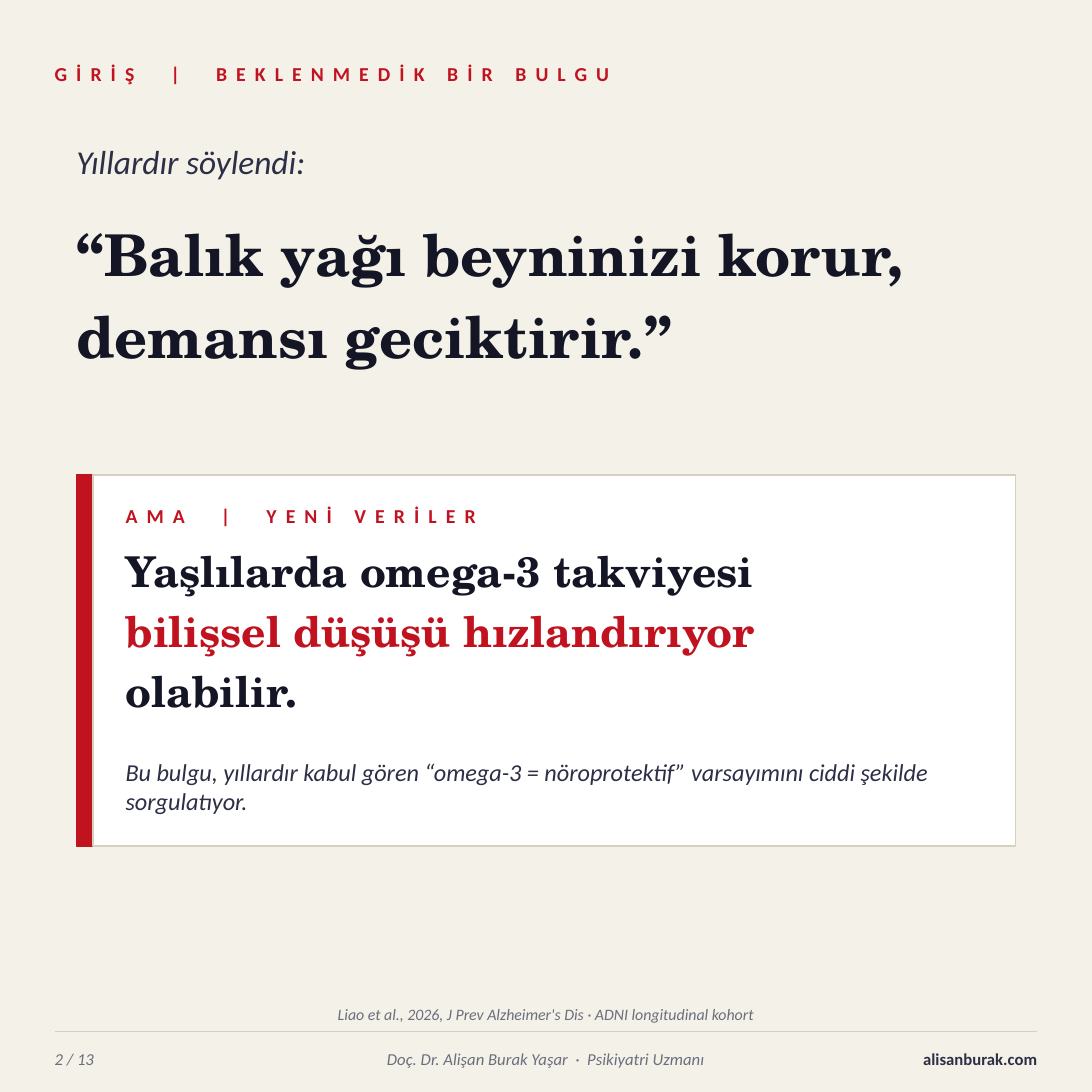
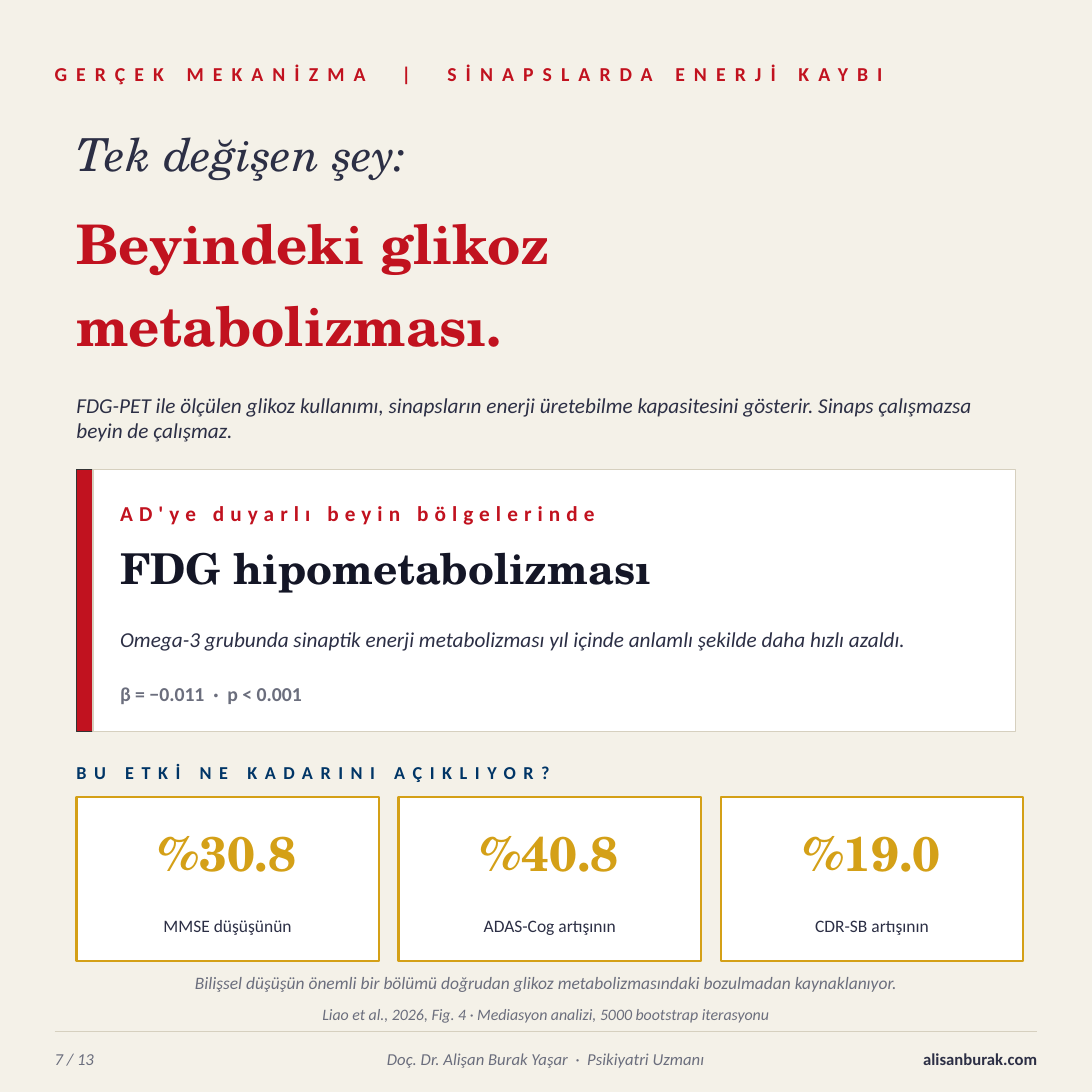
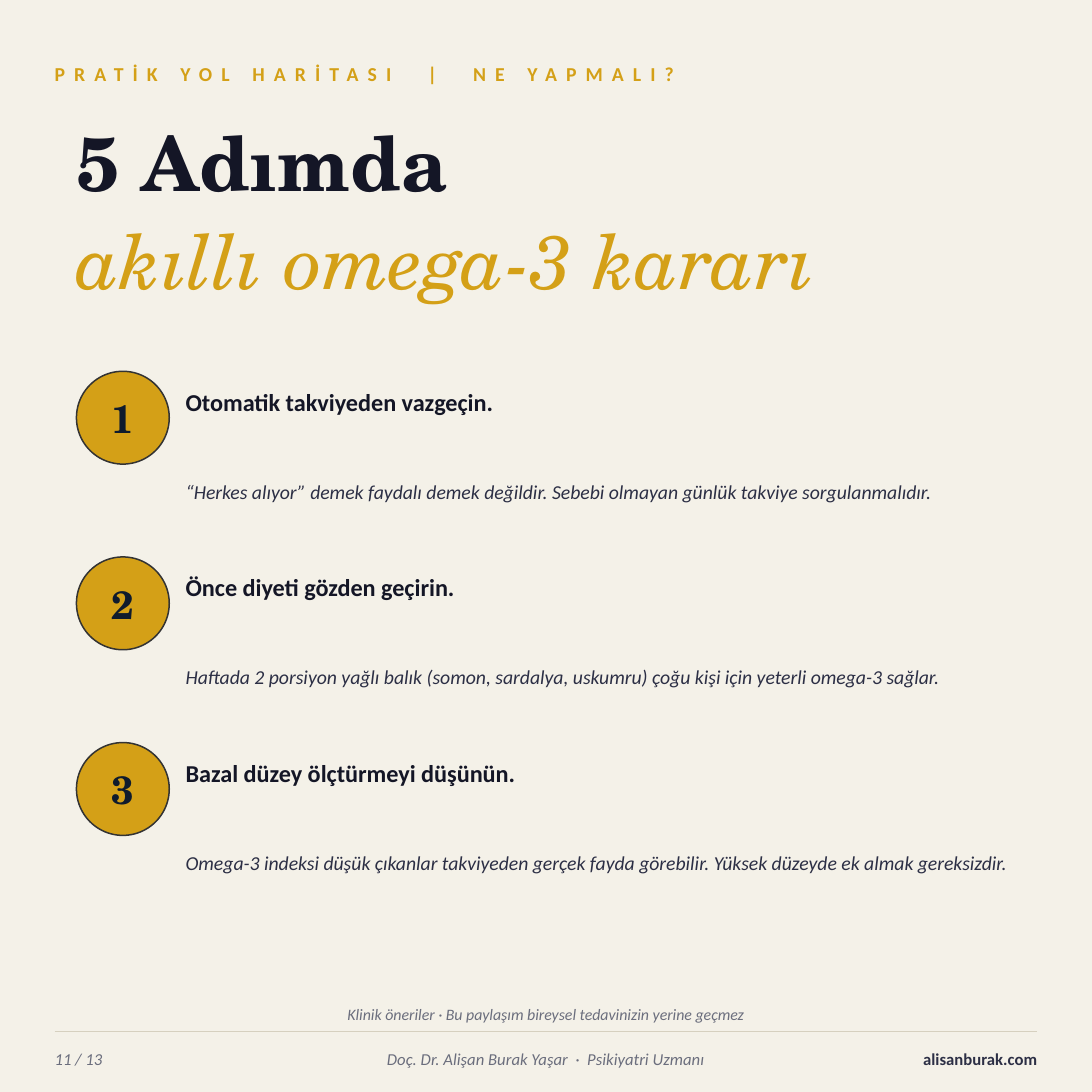
from dataclasses import dataclass, replace
from typing import NamedTuple

from lxml.etree import SubElement
from pptx import Presentation
from pptx.dml.color import RGBColor
from pptx.enum.shapes import MSO_CONNECTOR, MSO_SHAPE
from pptx.enum.text import MSO_ANCHOR, PP_ALIGN
from pptx.oxml.ns import qn
from pptx.presentation import Presentation as Deck
from pptx.shapes.autoshape import Shape
from pptx.slide import Slide
from pptx.util import Pt

PAPER, WHITE, BORDER, OUTLINE = "F4F1E8", "FFFFFF", "D6D0BF", "333333"
INK, SLATE, GREY, NAVY = "141626", "2C2F45", "6B6E7D", "0F1B2D"
RED, GOLD, BLUE = "C1121F", "D4A017", "003566"
SANS, SERIF = "Calibri", "TeX Gyre Schola"

SLIDE_SIZE = 720
SLIDE_TOTAL = 13
MARGIN = 36
BODY_LEFT = 50.4
BODY_WIDTH = 648
CARD_WIDTH = 619.2
BAR_WIDTH = 10.8


class Box(NamedTuple):
    left: float
    top: float
    width: float
    height: float


@dataclass(frozen=True)
class TextStyle:
    size: float
    color: str
    name: str = SANS
    bold: bool = False
    italic: bool = False
    spacing: float = 0
    align: PP_ALIGN = PP_ALIGN.LEFT


class TextRow(NamedTuple):
    text: str
    top: float
    height: float
    style: TextStyle


class Statistic(NamedTuple):
    value: str
    label: str


class Step(NamedTuple):
    title: str
    detail: str


KICKER = TextStyle(13, RED, bold=True, spacing=6)
HEADLINE = TextStyle(38, INK, SERIF, bold=True)
CARD_TITLE = replace(HEADLINE, size=28)
BODY = TextStyle(14, SLATE, italic=True)
SOURCE = TextStyle(10.5, GREY, italic=True, align=PP_ALIGN.CENTER)
FOOTER = TextStyle(11, GREY, italic=True)


def rgb(color: str) -> RGBColor:
    return RGBColor.from_string(color)


def write_text(shape: Shape, text: str, style: TextStyle) -> None:
    frame = shape.text_frame
    frame_format = {
        "word_wrap": True,
        "vertical_anchor": MSO_ANCHOR.MIDDLE,
        "margin_left": 0,
        "margin_top": 0,
        "margin_right": 0,
        "margin_bottom": 0,
    }
    for attribute, value in frame_format.items():
        setattr(frame, attribute, value)
    paragraph = frame.paragraphs[0]
    paragraph.alignment = style.align
    run = paragraph.add_run()
    run.text = text
    font_format = {
        "name": style.name,
        "size": Pt(style.size),
        "bold": style.bold,
        "italic": style.italic,
    }
    for attribute, value in font_format.items():
        setattr(run.font, attribute, value)
    run.font.color.rgb = rgb(style.color)
    if style.spacing:
        run._r.get_or_add_rPr().set("spc", str(round(style.spacing * 100)))


def add_text(slide: Slide, box: Box, text: str, style: TextStyle) -> None:
    write_text(slide.shapes.add_textbox(*map(Pt, box)), text, style)


def add_rows(slide: Slide, left: float, width: float, rows: list[TextRow]) -> None:
    """Add text rows that share a left edge and a width."""
    for row in rows:
        add_text(slide, Box(left, row.top, width, row.height), row.text, row.style)


def add_panel(slide: Slide, box: Box, fill: str, line: str, line_width: float = 1,
              kind: MSO_SHAPE = MSO_SHAPE.RECTANGLE) -> Shape:
    shape = slide.shapes.add_shape(kind, *map(Pt, box))
    shape.shadow.inherit = False
    shape.fill.solid()
    shape.fill.fore_color.rgb = rgb(fill)
    shape.line.color.rgb = rgb(line)
    shape.line.width = Pt(line_width)
    return shape


def add_card(slide: Slide, top: float, height: float, bar_line: str) -> None:
    """Add a white card with a red bar at its left edge."""
    add_panel(slide, Box(BODY_LEFT, top, BAR_WIDTH, height), RED, bar_line)
    card = Box(BODY_LEFT + BAR_WIDTH, top, CARD_WIDTH - BAR_WIDTH, height)
    add_panel(slide, card, WHITE, BORDER)


def add_footer(slide: Slide, number: int, source: str) -> None:
    rule = slide.shapes.add_connector(
        MSO_CONNECTOR.STRAIGHT, Pt(MARGIN), Pt(680.4), Pt(SLIDE_SIZE - MARGIN), Pt(680.4))
    rule.line.color.rgb = rgb(BORDER)
    rule.line.width = Pt(0.75)
    SubElement(rule._element.spPr, qn("a:effectLst"))
    add_text(slide, Box(MARGIN, 658.8, BODY_WIDTH, 20.16), source, SOURCE)

    top, height, side_width = 687.6, 21.6, 108
    center_left = MARGIN + side_width
    center_width = SLIDE_SIZE - 2 * center_left
    add_text(slide, Box(MARGIN, top, side_width, height),
             f"{number} / {SLIDE_TOTAL}", FOOTER)
    add_text(slide, Box(center_left, top, center_width, height),
             "Doç. Dr. Alişan Burak Yaşar  ·  Psikiyatri Uzmanı",
             replace(FOOTER, align=PP_ALIGN.CENTER))
    add_text(slide, Box(center_left + center_width, top, side_width, height),
             "alisanburak.com",
             TextStyle(11, SLATE, bold=True, align=PP_ALIGN.RIGHT))


def add_base_slide(presentation: Deck, number: int, kicker: str, source: str,
                   accent: str = RED) -> Slide:
    """Add a slide with background, kicker and footer."""
    slide = presentation.slides.add_slide(presentation.slide_layouts[6])
    slide.background.fill.solid()
    slide.background.fill.fore_color.rgb = rgb(PAPER)
    add_text(slide, Box(MARGIN, 36, BODY_WIDTH, 25.2), kicker,
             replace(KICKER, color=accent))
    add_footer(slide, number, source)
    return slide


def add_finding_slide(presentation: Deck) -> None:
    slide = add_base_slide(
        presentation, 2, "GİRİŞ  |  BEKLENMEDİK BİR BULGU",
        "Liao et al., 2026, J Prev Alzheimer's Dis · ADNI longitudinal kohort")
    add_rows(slide, BODY_LEFT, BODY_WIDTH, [
        TextRow("Yıllardır söylendi:", 86.4, 39.6, replace(BODY, size=22)),
        TextRow("“Balık yağı beyninizi korur,", 140.4, 54, HEADLINE),
        TextRow("demansı geciktirir.”", 194.4, 54, HEADLINE),
    ])
    add_card(slide, 313.2, 244.8, RED)
    add_rows(slide, 82.8, 561.6, [
        TextRow("AMA  |  YENİ VERİLER", 327.6, 25.2, KICKER),
        TextRow("Yaşlılarda omega-3 takviyesi", 356.4, 39.6, CARD_TITLE),
        TextRow("bilişsel düşüşü hızlandırıyor", 396, 39.6, replace(CARD_TITLE, color=RED)),
        TextRow("olabilir.", 435.6, 39.6, CARD_TITLE),
        TextRow("Bu bulgu, yıllardır kabul gören “omega-3 = nöroprotektif” varsayımını "
                "ciddi şekilde sorgulatıyor.", 493.2, 50.4, replace(BODY, size=16)),
    ])


def add_statistic(slide: Slide, left: float, statistic: Statistic) -> None:
    width, inset = 199.44, 10.8
    add_panel(slide, Box(left, 525.6, width, 108), WHITE, GOLD, 1.5)
    add_text(slide, Box(left, 532.8, width, 57.6), statistic.value,
             TextStyle(32, GOLD, SERIF, bold=True, align=PP_ALIGN.CENTER))
    add_text(slide, Box(left + inset, 594, width - 2 * inset, 32.4), statistic.label,
             TextStyle(11.5, SLATE, align=PP_ALIGN.CENTER))


def add_mechanism_slide(presentation: Deck) -> None:
    slide = add_base_slide(
        presentation, 7, "GERÇEK MEKANİZMA  |  SİNAPSLARDA ENERJİ KAYBI",
        "Liao et al., 2026, Fig. 4 · Mediasyon analizi, 5000 bootstrap iterasyonu")
    red_headline = replace(HEADLINE, size=36, color=RED)
    add_rows(slide, BODY_LEFT, BODY_WIDTH, [
        TextRow("Tek değişen şey:", 75.6, 50.4, replace(BODY, size=30, name=SERIF)),
        TextRow("Beyindeki glikoz", 133.2, 54, red_headline),
        TextRow("metabolizması.", 187.2, 54, red_headline),
        TextRow("BU ETKİ NE KADARINI AÇIKLIYOR?", 496.8, 25.2,
                replace(KICKER, size=12, color=BLUE, spacing=5)),
    ])
    add_rows(slide, BODY_LEFT, CARD_WIDTH, [
        TextRow("FDG-PET ile ölçülen glikoz kullanımı, sinapsların enerji üretebilme "
                "kapasitesini gösterir. Sinaps çalışmazsa beyin de çalışmaz.",
                252, 46.8, BODY),
        TextRow("Bilişsel düşüşün önemli bir bölümü doğrudan glikoz metabolizmasındaki "
                "bozulmadan kaynaklanıyor.", 637.2, 21.6, replace(SOURCE, size=11.5)),
    ])
    add_card(slide, 309.6, 172.8, OUTLINE)
    add_rows(slide, 79.2, 576, [
        TextRow("AD'ye duyarlı beyin bölgelerinde", 324, 28.8,
                replace(KICKER, size=14, spacing=4)),
        TextRow("FDG hipometabolizması", 352.8, 43.2, CARD_TITLE),
        TextRow("Omega-3 grubunda sinaptik enerji metabolizması yıl içinde anlamlı "
                "şekilde daha hızlı azaldı.", 403.2, 36, BODY),
        TextRow("β = −0.011  ·  p < 0.001", 442.8, 28.8, TextStyle(13, GREY, bold=True)),
    ])
    statistics = [
        Statistic("%30.8", "MMSE düşüşünün"),
        Statistic("%40.8", "ADAS-Cog artışının"),
        Statistic("%19.0", "CDR-SB artışının"),
    ]
    for index, statistic in enumerate(statistics):
        add_statistic(slide, BODY_LEFT + index * 212.4, statistic)


def add_step(slide: Slide, number: int, top: float, step: Step) -> None:
    diameter = 61.2
    circle = add_panel(slide, Box(BODY_LEFT, top, diameter, diameter), GOLD, OUTLINE,
                       kind=MSO_SHAPE.OVAL)
    write_text(circle, str(number),
               TextStyle(26, NAVY, SERIF, bold=True, align=PP_ALIGN.CENTER))
    add_rows(slide, 122.4, 547.2, [
        TextRow(step.title, top + 3.6, 32.4, TextStyle(16, INK, bold=True)),
        TextRow(step.detail, top + 36, 86.4, replace(BODY, size=13)),
    ])


def add_steps_slide(presentation: Deck) -> None:
    slide = add_base_slide(
        presentation, 11, "PRATİK YOL HARİTASI  |  NE YAPMALI?",
        "Klinik öneriler · Bu paylaşım bireysel tedavinizin yerine geçmez", GOLD)
    add_rows(slide, BODY_LEFT, BODY_WIDTH, [
        TextRow("5 Adımda", 75.6, 61.2, replace(HEADLINE, size=50)),
        TextRow("akıllı omega-3 kararı", 140.4, 61.2,
                TextStyle(50, GOLD, SERIF, italic=True)),
    ])
    steps = [
        Step("Otomatik takviyeden vazgeçin.",
             "“Herkes alıyor” demek faydalı demek değildir. Sebebi olmayan günlük "
             "takviye sorgulanmalıdır."),
        Step("Önce diyeti gözden geçirin.",
             "Haftada 2 porsiyon yağlı balık (somon, sardalya, uskumru) çoğu kişi için "
             "yeterli omega-3 sağlar."),
        Step("Bazal düzey ölçtürmeyi düşünün.",
             "Omega-3 indeksi düşük çıkanlar takviyeden gerçek fayda görebilir. Yüksek "
             "düzeyde ek almak gereksizdir."),
    ]
    for index, step in enumerate(steps):
        add_step(slide, index + 1, 244.8 + index * 122.4, step)


def main() -> None:
    presentation = Presentation()
    presentation.slide_width = presentation.slide_height = Pt(SLIDE_SIZE)
    add_finding_slide(presentation)
    add_mechanism_slide(presentation)
    add_steps_slide(presentation)
    presentation.save("out.pptx")


if __name__ == "__main__":
    main()
